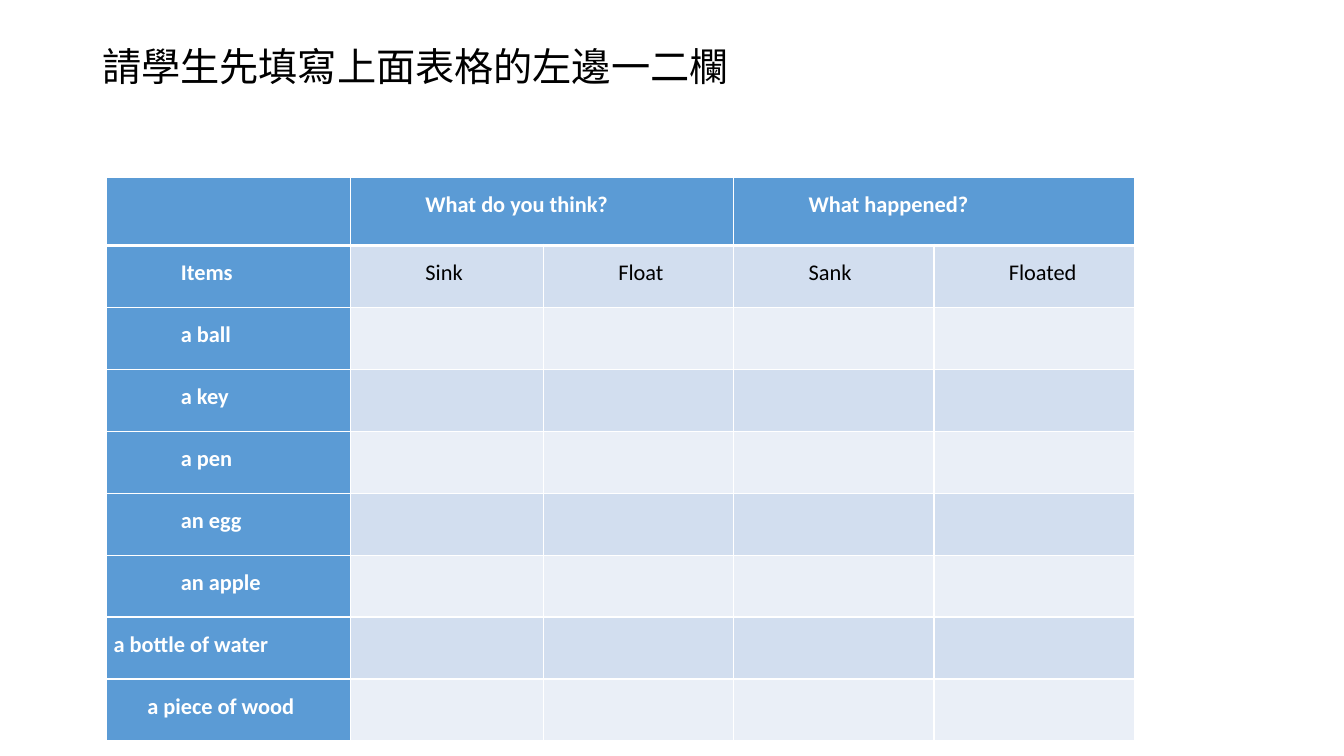
from pptx import Presentation
from pptx.dml.color import RGBColor
from pptx.enum.text import MSO_ANCHOR as Anchor
from pptx.oxml import parse_xml
from pptx.oxml.ns import nsdecls
from pptx.util import Pt

# Content
HEADING = "請學生先填寫上面表格的左邊一二欄"
QUESTIONS = {1: "What do you think?", 3: "What happened?"}
OUTCOMES = ["Items", "Sink", "Float", "Sank", "Floated"]
# Item, left margin, first-line indent
ITEMS = [
    ("a ball", 24, 24),
    ("a key", 24, 24),
    ("a pen", 24, 24),
    ("an egg", 24, 24),
    ("an apple", 24, 24),
    ("a bottle of water", 0, 0),
    ("a piece of wood", 24, 0),
]

# Look
FONT = "Calibri"
BLACK = RGBColor(0x00, 0x00, 0x00)
WHITE = RGBColor(0xFF, 0xFF, 0xFF)
BLUE = RGBColor(0x5B, 0x9B, 0xD5)
BAND_DARK = RGBColor(0xD2, 0xDE, 0xEF)
BAND_LIGHT = RGBColor(0xEA, 0xEF, 0xF7)
COLUMN_WIDTHS = [174.7, 137.8, 135.9, 143, 143]
HEADER_HEIGHT, ROW_HEIGHT = 48.3, 44.25
THIN, THICK = 1, 3


def style_run(paragraph, size, color, bold=False):
    font = paragraph.runs[0].font
    font.name, font.size, font.bold = FONT, Pt(size), bold
    font.color.rgb = color


def style_cell(cell, row, column):
    header = row == 0 or column == 0
    cell.fill.solid()
    cell.fill.fore_color.rgb = (
        BLUE if header else BAND_DARK if row % 2 else BAND_LIGHT)
    cell.margin_left = cell.margin_right = Pt(5.4)
    cell.margin_top = cell.margin_bottom = 0
    widths = {"L": THIN, "R": THIN,
              "T": THICK if row == 1 else THIN,
              "B": THICK if row == 0 else THIN}
    properties = cell._tc.get_or_add_tcPr()
    for position, (side, width) in enumerate(widths.items()):
        properties.insert(position, parse_xml(
            f'<a:ln{side} {nsdecls("a")} w="{Pt(width)}"><a:solidFill>'
            f'<a:srgbClr val="{WHITE}"/></a:solidFill></a:ln{side}>'))


def write_cell(cell, text, header, margin=24, indent=24):
    paragraph = cell.text_frame.paragraphs[0]
    paragraph.text = text
    paragraph.line_spacing = 1.5
    properties = paragraph._p.get_or_add_pPr()
    properties.set("marL", str(Pt(margin)))
    properties.set("indent", str(Pt(indent)))
    style_run(paragraph, 16, WHITE if header else BLACK, header)


presentation = Presentation()
presentation.slide_width, presentation.slide_height = Pt(960), Pt(540)
slide = presentation.slides.add_slide(presentation.slide_layouts[6])

# Heading
heading = slide.shapes.add_textbox(Pt(66), Pt(28.8), Pt(828), Pt(104.4)).text_frame
heading.word_wrap = True
heading.vertical_anchor = Anchor.TOP
heading.margin_top = Pt(5)
heading.text = HEADING
heading.paragraphs[0].line_spacing = 0.9
style_run(heading.paragraphs[0], 28, BLACK)

# Prediction table
row_heights = [HEADER_HEIGHT] + [ROW_HEIGHT] * (len(ITEMS) + 1)
predictions = slide.shapes.add_table(
    len(row_heights), len(COLUMN_WIDTHS), Pt(75.8), Pt(127),
    Pt(sum(COLUMN_WIDTHS)), Pt(sum(row_heights))).table
for column, width in zip(predictions.columns, COLUMN_WIDTHS):
    column.width = Pt(width)
for row, height in zip(predictions.rows, row_heights):
    row.height = Pt(height)
for r in range(len(row_heights)):
    for c in range(len(COLUMN_WIDTHS)):
        style_cell(predictions.cell(r, c), r, c)

# Table text
for c, question in QUESTIONS.items():
    predictions.cell(0, c).merge(predictions.cell(0, c + 1))
    write_cell(predictions.cell(0, c), question, True)
for c, outcome in enumerate(OUTCOMES):
    write_cell(predictions.cell(1, c), outcome, c == 0)
for r, (item, margin, indent) in enumerate(ITEMS, start=2):
    write_cell(predictions.cell(r, 0), item, True, margin, indent)

presentation.save("out.pptx")
